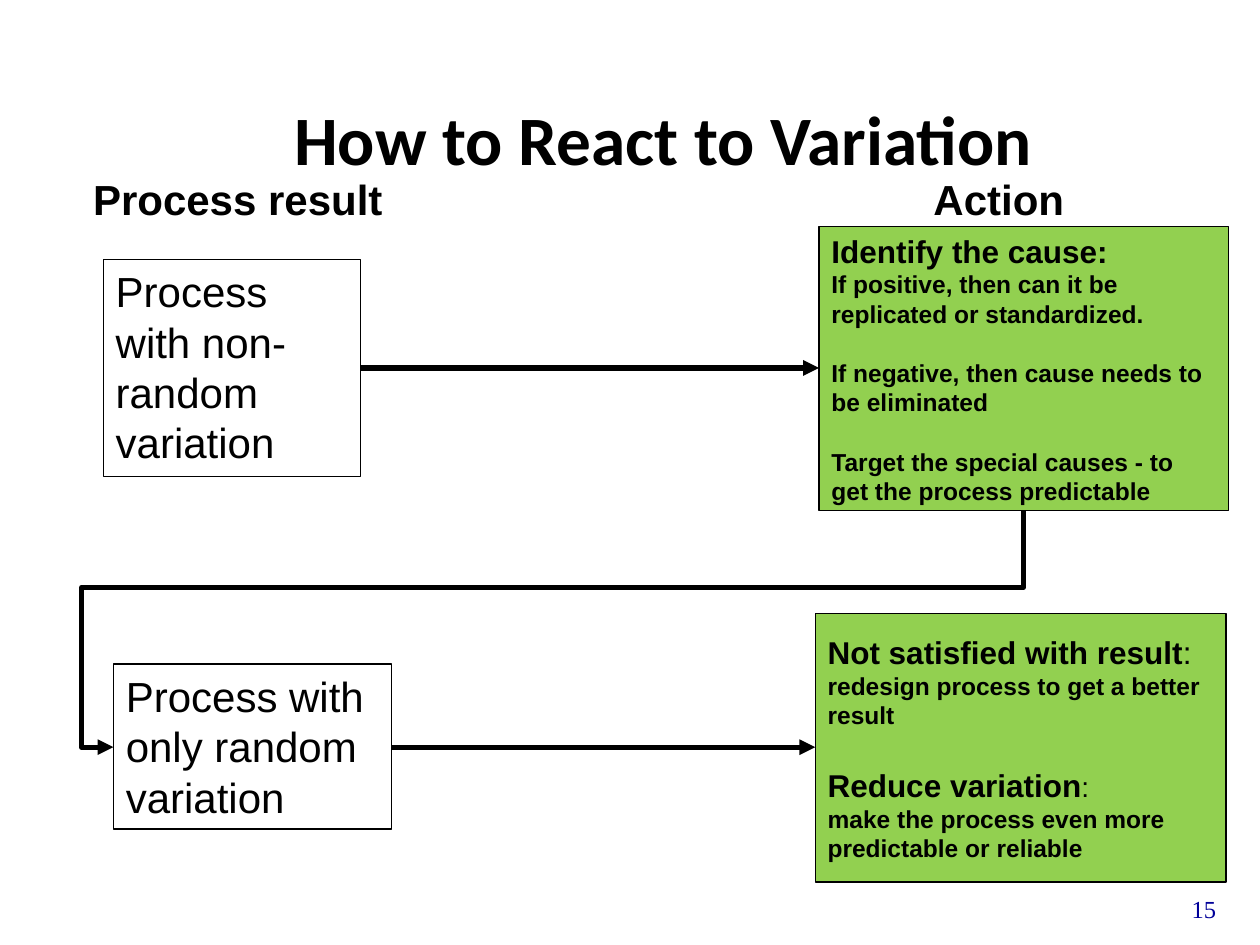
from lxml import etree
from pptx import Presentation
from pptx.dml.color import RGBColor
from pptx.enum.shapes import MSO_CONNECTOR as Link, MSO_SHAPE as Shape
from pptx.enum.text import MSO_ANCHOR as Anchor, MSO_AUTO_SIZE as Fit, PP_ALIGN as Align
from pptx.oxml.ns import qn
from pptx.util import Inches, Pt

BLACK = RGBColor(0, 0, 0)
GREEN = RGBColor(0x92, 0xD0, 0x50)
NAVY = RGBColor(0, 0, 0x99)
WIDE, HIGH = Inches(10), Inches(7.5)
COLS, ROWS = 100, 75


def place(box):
    """Turn a box in grid columns and rows into slide lengths."""
    return [int(n * size / cells) for n, size, cells in
            zip(box, (WIDE, HIGH) * 2, (COLS, ROWS) * 2)]


def style(item, form):
    """Set each named attribute of an item."""
    for name, value in form.items():
        setattr(item, name, value)


def write(frame, paras, align=Align.LEFT, color=BLACK, face="Arial"):
    """Fill a frame with (space before, runs) paragraphs."""
    for i, (gap, runs) in enumerate(paras):
        para = frame.add_paragraph() if i else frame.paragraphs[0]
        style(para, {"alignment": align, "space_before": Pt(gap)})
        for text, size, bold in runs:
            run = para.add_run()
            run.text = text
            style(run.font, {"name": face, "size": Pt(size), "bold": bold})
            run.font.color.rgb = color


def label(slide, box, text, size, bold=True, wrap=True, anchor=Anchor.TOP, **look):
    """Add one line of plain text."""
    frame = slide.shapes.add_textbox(*place(box)).text_frame
    style(frame, {"word_wrap": wrap, "vertical_anchor": anchor})
    write(frame, [(0, [(text, size, bold)])], **look)


def panel(slide, box, paras, fill=None):
    """Add an outlined box, filled for an action and clear for a result."""
    shape = slide.shapes.add_shape(Shape.RECTANGLE, *place(box))
    shape.shadow.inherit = False
    style(shape.line, {"width": Pt(0.75)})
    shape.line.color.rgb = BLACK
    if fill is None:
        shape.fill.background()
    else:
        shape.fill.solid()
        shape.fill.fore_color.rgb = fill
    style(shape.text_frame, {
        "word_wrap": True,
        "vertical_anchor": Anchor.MIDDLE if fill else Anchor.TOP,
        "auto_size": Fit.NONE if fill else Fit.SHAPE_TO_FIT_TEXT})
    write(shape.text_frame, paras)


def arrow(slide, ends, kind=Link.STRAIGHT):
    """Draw a thick connector with a triangle head at its end."""
    link = slide.shapes.add_connector(kind, *place(ends))
    link.line.width = Pt(3)
    link.line.color.rgb = BLACK
    props = link._element.spPr
    etree.SubElement(props.find(qn("a:ln")), qn("a:tailEnd"), type="triangle")
    etree.SubElement(props, qn("a:effectLst"))
    return props


def loop(slide, start, end):
    """Lead from the foot of an action back to the side of a result."""
    (right, top), (left, foot) = start, end
    x, y = (left + right) / 2, (top + foot) / 2
    w, h = (foot - top) / 2, (right - left) / 2
    props = arrow(slide, (x - w, y - h, x + w, y + h), Link.ELBOW)
    props.find(qn("a:xfrm")).set("rot", "5400000")
    geom = props.find(qn("a:prstGeom"))
    geom.set("prst", "bentConnector4")
    guides = geom.get_or_add_avLst()
    for name, value in (("adj1", 32600), ("adj2", 103500)):
        etree.SubElement(guides, qn("a:gd"), name=name, fmla=f"val {value}")


def stage(slide, result, text, action, paras, y):
    """Add a result, its action and the arrow between them."""
    panel(slide, result, [(0, [(text, 24, False)])])
    panel(slide, action, paras, GREEN)
    arrow(slide, (result[0] + result[2], y, action[0], y))


def heads(slide):
    """Add the title, the column heads and the page number."""
    label(slide, (6.6, 6.8, 92.1, 8.2), "How to React to Variation", 39.6,
          anchor=Anchor.MIDDLE, align=Align.CENTER, face="Calibri")
    label(slide, (6.4, 13.3, 25.2, 5), "Process result", 24, wrap=False)
    label(slide, (73.1, 13.3, 12.5, 5), "Action", 24, wrap=False)
    label(slide, (76.7, 70.5, 20.8, 5), "15", 14, False,
          align=Align.RIGHT, color=NAVY, face="Times New Roman")


def main():
    """Build the slide and save it."""
    deck = Presentation()
    style(deck, {"slide_width": WIDE, "slide_height": HIGH})
    slide = deck.slides.add_slide(deck.slide_layouts[6])
    heads(slide)
    stage(slide, (8.2, 20.6, 20.4, 17.2), "Process with non-random variation",
          (65, 18, 32.5, 22.5), [
              (0, [("Identify the cause:", 18, True)]),
              (0, [("If positive, then can it be replicated or standardized.", 14, True)]),
              (17, [("If negative, then cause needs to be eliminated", 14, True)]),
              (17, [("Target the special causes - to get the process predictable", 14, True)]),
          ], 29.2)
    stage(slide, (9, 52.7, 22.1, 13.1), "Process with only random variation",
          (64.7, 48.7, 32.6, 21.3), [
              (0, [("Not satisfied with result", 18, True), (": ", 18, False),
                   ("redesign process to get a better result", 14, True)]),
              (21, [("Reduce variation", 18, True), (":", 16, False)]),
              (0, [("make the process even more predictable or reliable", 14, True)]),
          ], 59.3)
    loop(slide, (81.2, 40.5), (9, 59.3))
    deck.save("out.pptx")


if __name__ == "__main__":
    main()
